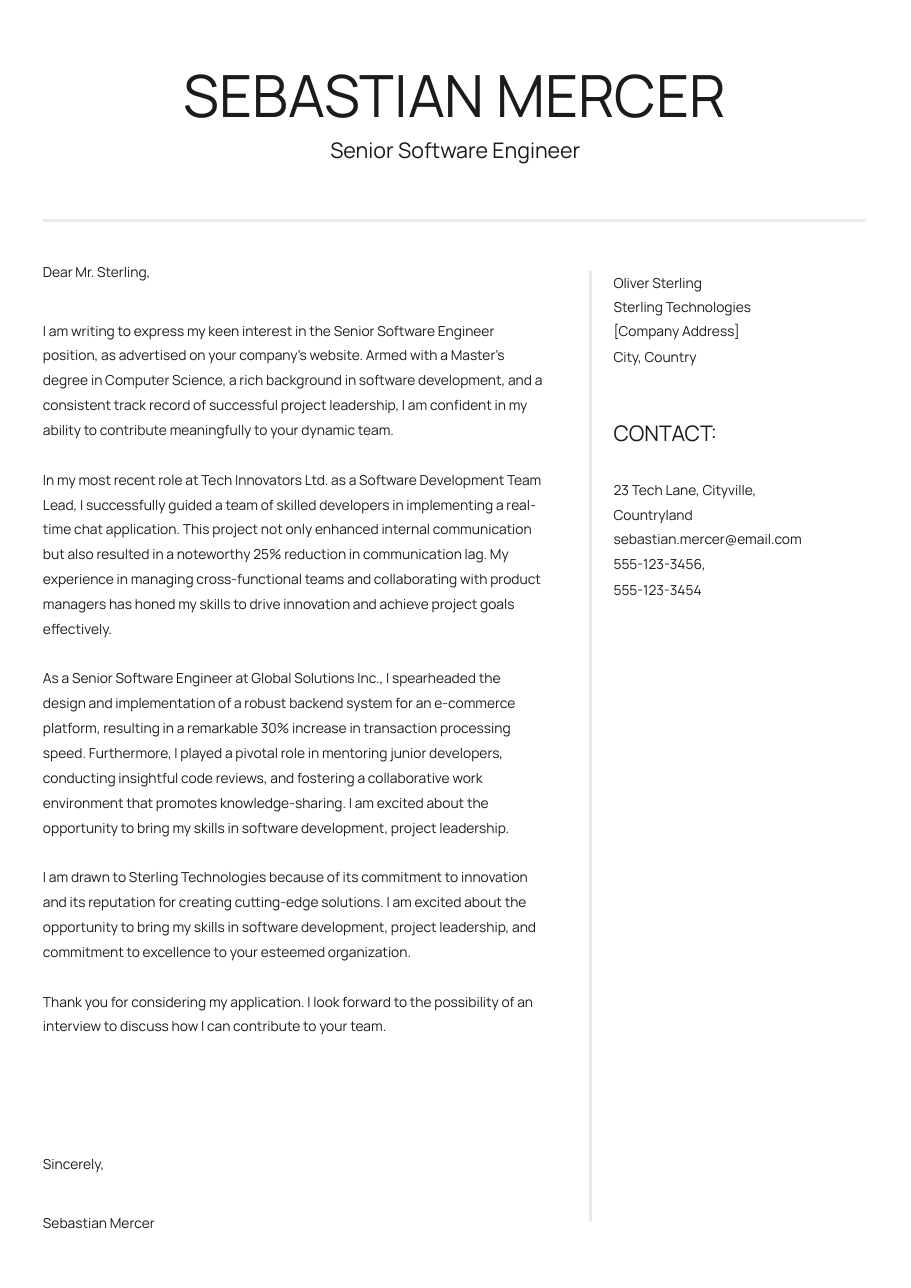
from dataclasses import dataclass

import pptx
import pptx.dml.color
import pptx.enum.shapes
import pptx.enum.text
import pptx.oxml.ns
import pptx.util
from lxml import etree

Inches = pptx.util.Inches
Pt = pptx.util.Pt
PP_ALIGN = pptx.enum.text.PP_ALIGN


@dataclass(frozen=True)
class Theme:
    font: str = "Manrope"
    ink: str = "1B1B1A"
    rule: str = "EAEAEA"
    name_size: float = 38
    heading_size: float = 14
    body_size: float = 9
    rule_width: float = 1.5
    open_spacing: float = 1.5
    paragraph_gap: float = 16.2


class LetterPage:
    def __init__(self, slide, theme):
        self.slide = slide
        self.theme = theme

    def fill_text(self, shape, box, paragraphs, size, spacing, alignment, gap=0):
        shape.left, shape.top, shape.width, shape.height = map(Inches, box)
        frame = shape.text_frame
        frame.margin_left = frame.margin_right = 0
        frame.margin_top = frame.margin_bottom = 0
        frame.vertical_anchor = pptx.enum.text.MSO_ANCHOR.TOP
        frame.word_wrap = True
        frame.auto_size = pptx.enum.text.MSO_AUTO_SIZE.SHAPE_TO_FIT_TEXT
        frame.text = "\n".join(paragraphs)
        for index, paragraph in enumerate(frame.paragraphs):
            paragraph.alignment = alignment
            paragraph.line_spacing = spacing
            paragraph.space_before = Pt(gap if index else 0)
            for run in paragraph.runs:
                run.font.name = self.theme.font
                run.font.size = Pt(size)
                run.font.color.rgb = pptx.dml.color.RGBColor.from_string(self.theme.ink)

    def title(self, box, text):
        self.fill_text(self.slide.shapes.title, box, [text], self.theme.name_size,
                       1.0, PP_ALIGN.CENTER)

    def heading(self, box, text, alignment=PP_ALIGN.LEFT):
        shape = self.slide.shapes.add_textbox(0, 0, 0, 0)
        self.fill_text(shape, box, [text], self.theme.heading_size, 1.0, alignment)

    def body(self, box, paragraphs, spacing=None, gap=0):
        shape = self.slide.shapes.add_textbox(0, 0, 0, 0)
        self.fill_text(shape, box, paragraphs, self.theme.body_size,
                       spacing or self.theme.open_spacing, PP_ALIGN.LEFT, gap)

    def rule(self, start, end):
        connector = self.slide.shapes.add_connector(
            pptx.enum.shapes.MSO_CONNECTOR.STRAIGHT, *map(Inches, start + end))
        connector.line.color.rgb = pptx.dml.color.RGBColor.from_string(self.theme.rule)
        connector.line.width = Pt(self.theme.rule_width)
        etree.SubElement(connector._element.spPr, pptx.oxml.ns.qn("a:effectLst"))


LEFT, RIGHT = 0.39, 7.86
LETTER_WIDTH, GREETING_WIDTH = 4.55, 3.28
SIDE_LEFT, SIDE_WIDTH = 5.57, 2.29
LINE_HEIGHT = 0.15

LETTER = [
    "I am writing to express my keen interest in the Senior Software Engineer position, "
    "as advertised on your company's website. Armed with a Master's degree in Computer "
    "Science, a rich background in software development, and a consistent track record "
    "of successful project leadership, I am confident in my ability to contribute "
    "meaningfully to your dynamic team.",
    "In my most recent role at Tech Innovators Ltd. as a Software Development Team Lead, "
    "I successfully guided a team of skilled developers in implementing a real-time chat "
    "application. This project not only enhanced internal communication but also resulted "
    "in a noteworthy 25% reduction in communication lag. My experience in managing "
    "cross-functional teams and collaborating with product managers has honed my skills "
    "to drive innovation and achieve project goals effectively.",
    "As a Senior Software Engineer at Global Solutions Inc., I spearheaded the design and "
    "implementation of a robust backend system for an e-commerce platform, resulting in a "
    "remarkable 30% increase in transaction processing speed. Furthermore, I played a "
    "pivotal role in mentoring junior developers, conducting insightful code reviews, and "
    "fostering a collaborative work environment that promotes knowledge-sharing. I am "
    "excited about the opportunity to bring my skills in software development, project "
    "leadership.",
    "I am drawn to Sterling Technologies because of its commitment to innovation and its "
    "reputation for creating cutting-edge solutions. I am excited about the opportunity "
    "to bring my skills in software development, project leadership, and commitment to "
    "excellence to your esteemed organization.",
    "Thank you for considering my application. I look forward to the possibility of an "
    "interview to discuss how I can contribute to your team.",
]

SIDE_ENTRIES = [
    (2.42, ["Oliver Sterling"]),
    (2.64, ["Sterling Technologies"]),
    (2.85, ["[Company Address]"]),
    (3.09, ["City, Country"]),
    (4.3, ["23 Tech Lane, Cityville,", "Countryland"]),
    (4.74, ["sebastian.mercer@email.com"]),
    (4.97, ["555-123-3456,"]),
    (5.2, ["555-123-3454"]),
]


def main():
    presentation = pptx.Presentation()
    presentation.slide_width = Inches(8.27)
    presentation.slide_height = Inches(11.69)
    title_only = presentation.slide_layouts.get_by_name("Title Only")
    theme = Theme()
    page = LetterPage(presentation.slides.add_slide(title_only), theme)

    page.title((1.34, 0.54, 5.58, 0.64), "SEBASTIAN MERCER")
    page.heading((2.24, 1.24, 3.79, 0.24), "Senior Software Engineer", PP_ALIGN.CENTER)
    page.rule((LEFT, 2), (RIGHT, 2))
    page.rule((5.36, 2.46), (5.36, 11.08))

    page.body((LEFT, 2.39, GREETING_WIDTH, LINE_HEIGHT), ["Dear Mr. Sterling,"], spacing=1.0)
    page.body((LEFT, 2.85, LETTER_WIDTH, 7.42), LETTER, gap=theme.paragraph_gap)
    page.body((LEFT, 10.49, GREETING_WIDTH, LINE_HEIGHT), ["Sincerely,"], spacing=1.0)
    page.body((LEFT, 10.95, LETTER_WIDTH, LINE_HEIGHT), ["Sebastian Mercer"])

    page.heading((SIDE_LEFT, 3.81, SIDE_WIDTH, 0.24), "CONTACT:")
    for top, lines in SIDE_ENTRIES:
        height = LINE_HEIGHT if len(lines) == 1 else 0.38
        page.body((SIDE_LEFT, top, SIDE_WIDTH, height), lines)

    presentation.save("out.pptx")


if __name__ == "__main__":
    main()
